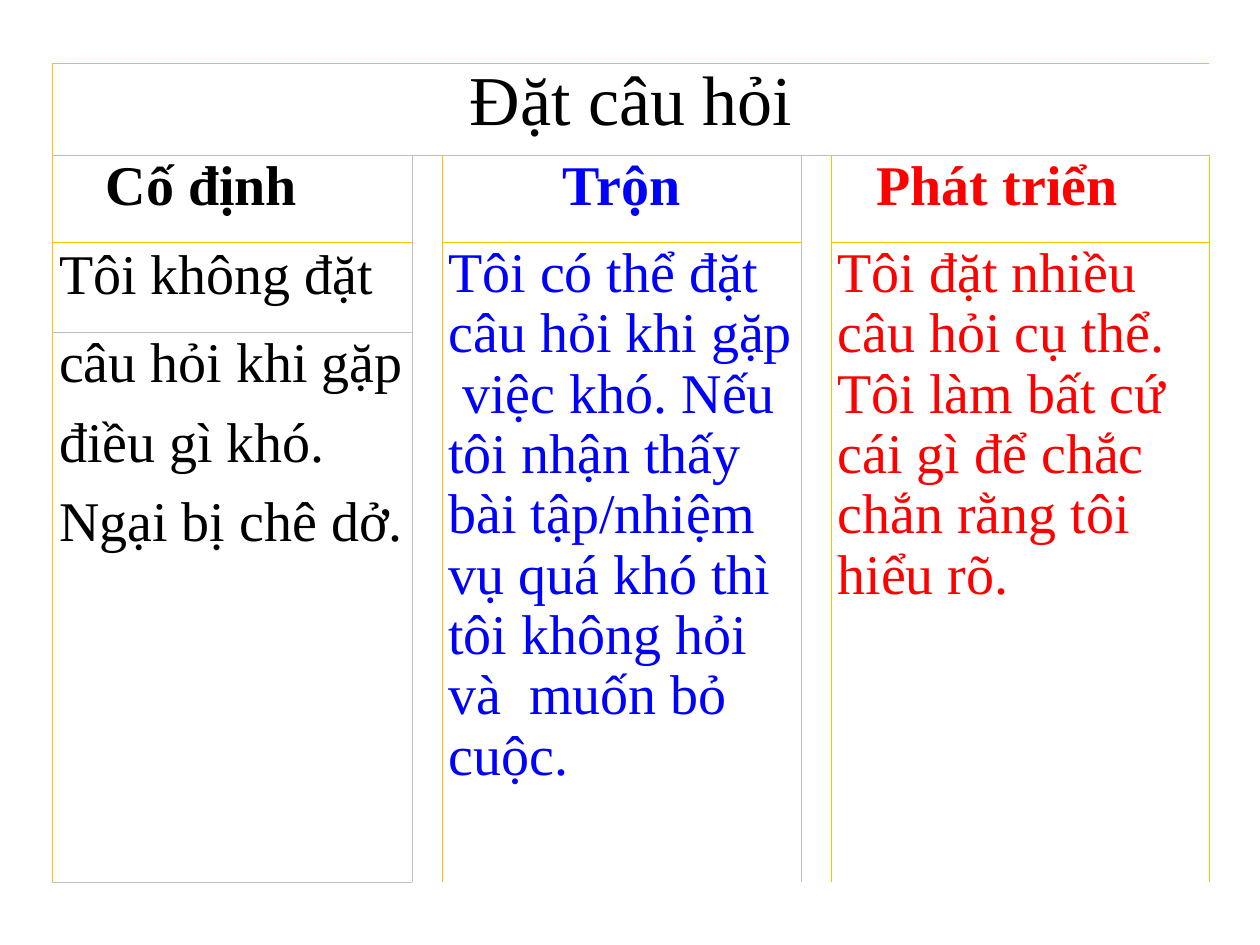
from dataclasses import dataclass
from typing import Optional

import pptx
import pptx.dml.color
import pptx.enum.text
import pptx.oxml
import pptx.oxml.ns
import pptx.util

Pt = pptx.util.Pt
ALIGN = pptx.enum.text.PP_ALIGN
FONT = "Times New Roman"
BLACK, BLUE, RED = "000000", "0000FF", "FF0000"
GOLD, GRAY = "FFC000", "BFBFBF"

COL_WIDTHS = [205.2, 14.4, 205.2, 13.7, 216]
ROW_HEIGHTS = [52.6, 49.7, 51.8, 45.4, 45.4, 223.2]


@dataclass
class Region:
    """A block of cells with one outline, given as left, right, top, bottom."""
    row: int
    col: int
    last_row: int
    last_col: int
    edges: tuple[Optional[str], ...]
    merged: bool = True


@dataclass
class CellText:
    row: int
    col: int
    text: str
    color: str = BLACK
    size: float = 32
    bold: bool = False
    centered: bool = False
    indent: float = 0
    before: float = 0
    top: float = 0
    spacing: float = 1


REGIONS = [
    Region(0, 0, 0, 4, (GOLD, GOLD, GOLD, GRAY)),
    # Headings
    Region(1, 0, 1, 0, (GOLD, GRAY, GRAY, GOLD)),
    Region(1, 2, 1, 2, (GOLD, GRAY, GRAY, GOLD)),
    Region(1, 4, 1, 4, (GOLD, GOLD, GRAY, GOLD)),
    # Gaps between the columns
    Region(1, 1, 5, 1, (GRAY, GOLD, GRAY, None)),
    Region(1, 3, 5, 3, (GRAY, GOLD, GRAY, None)),
    # Bodies
    Region(2, 0, 2, 0, (GOLD, GRAY, GOLD, GRAY)),
    Region(3, 0, 5, 0, (GOLD, GRAY, GRAY, GRAY), merged=False),
    Region(2, 2, 5, 2, (GOLD, GRAY, GOLD, GRAY)),
    Region(2, 4, 5, 4, (GOLD, GOLD, GOLD, GRAY)),
]

TEXTS = [
    CellText(0, 0, "Đặt câu hỏi", size=40, centered=True),
    CellText(1, 0, "Cố định", bold=True, indent=30.2, before=0.2),
    CellText(1, 2, "Trộn", BLUE, bold=True, centered=True, before=0.2),
    CellText(1, 4, "Phát triển", RED, bold=True, indent=25.9, before=0.2),
    CellText(2, 0, "Tôi không đặt", indent=3.6, before=1.4, top=1.4),
    CellText(3, 0, "câu hỏi khi gặp", indent=3.6),
    CellText(4, 0, "điều gì khó.", indent=3.6),
    CellText(5, 0, "Ngại bị chê dở.", indent=3.6),
    CellText(2, 2, "Tôi có thể đặt  câu hỏi khi gặp  việc khó. Nếu  tôi nhận thấy  "
             "bài tập/nhiệm  vụ quá khó thì  tôi không hỏi và  muốn bỏ cuộc.",
             BLUE, indent=3.6, before=1.2, top=1.4, spacing=0.97),
    CellText(2, 4, "Tôi đặt nhiều  câu hỏi cụ thể.  Tôi làm bất cứ  cái gì để chắc  "
             "chắn rằng tôi  hiểu rõ.",
             RED, indent=3.6, before=1.5, top=1.4, spacing=0.97),
]


def rgb(color: str) -> pptx.dml.color.RGBColor:
    return pptx.dml.color.RGBColor.from_string(color)


def set_border(cell, side: str, color: Optional[str]) -> None:
    fill = f'<a:solidFill><a:srgbClr val="{color}"/></a:solidFill>' if color else "<a:noFill/>"
    ns = pptx.oxml.ns.nsdecls("a")
    xml = f'<a:ln{side} {ns} w="{int(Pt(0.5))}">{fill}</a:ln{side}>'
    cell._tc.get_or_add_tcPr().append(pptx.oxml.parse_xml(xml))


def draw_region(table, region: Region) -> None:
    left, right, top, bottom = region.edges
    for row in range(region.row, region.last_row + 1):
        for col in range(region.col, region.last_col + 1):
            cell = table.cell(row, col)
            set_border(cell, "L", left if col == region.col else None)
            set_border(cell, "R", right if col == region.last_col else None)
            set_border(cell, "T", top if row == region.row else None)
            set_border(cell, "B", bottom if row == region.last_row else None)
            cell.fill.background()
    if region.merged and (region.row, region.col) != (region.last_row, region.last_col):
        table.cell(region.row, region.col).merge(table.cell(region.last_row, region.last_col))


def write_text(table, item: CellText) -> None:
    cell = table.cell(item.row, item.col)
    cell.margin_left = cell.margin_right = cell.margin_bottom = 0
    cell.margin_top = Pt(item.top)
    p = cell.text_frame.paragraphs[0]
    p.text = item.text
    p.alignment = ALIGN.CENTER if item.centered else ALIGN.LEFT
    p.space_before = Pt(item.before)
    p.line_spacing = item.spacing
    p.font.name, p.font.size, p.font.bold = FONT, Pt(item.size), item.bold
    p.font.color.rgb = rgb(item.color)
    p._p.get_or_add_pPr().set("marL", str(int(Pt(item.indent))))


def main() -> None:
    prs = pptx.Presentation()
    prs.slide_width, prs.slide_height = Pt(720), Pt(540)
    s = prs.slides.add_slide(prs.slide_layouts[6])

    # Table grid
    frame = s.shapes.add_table(len(ROW_HEIGHTS), len(COL_WIDTHS), Pt(30.2), Pt(36),
                               Pt(sum(COL_WIDTHS)), Pt(sum(ROW_HEIGHTS)))
    table = frame.table
    table.first_row = table.horz_banding = False
    for column, width in zip(table.columns, COL_WIDTHS):
        column.width = Pt(width)
    for row, height in zip(table.rows, ROW_HEIGHTS):
        row.height = Pt(height)

    # Outlines and wording
    for region in REGIONS:
        draw_region(table, region)
    for item in TEXTS:
        write_text(table, item)

    prs.save("out.pptx")


if __name__ == "__main__":
    main()
